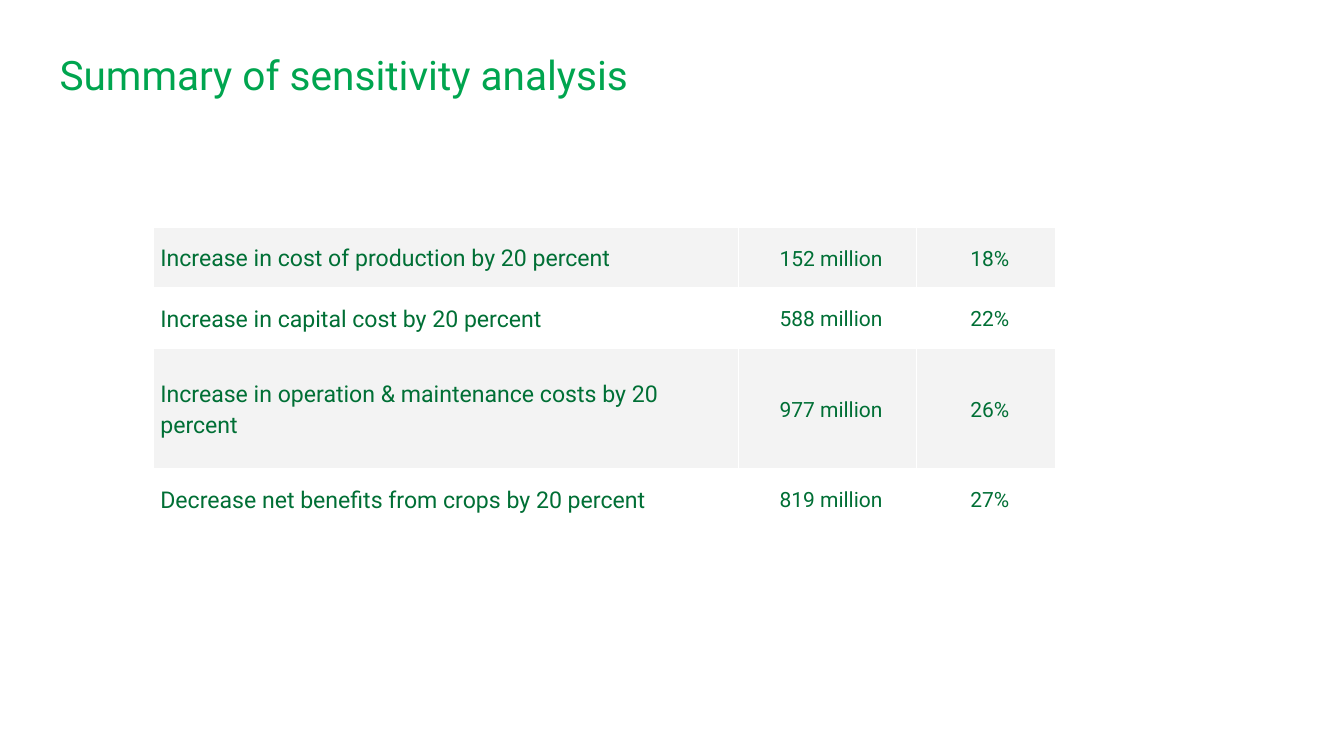
import dataclasses

import lxml.etree
import pptx
import pptx.dml.color
import pptx.enum.text
import pptx.oxml.ns
import pptx.util

Cm = pptx.util.Cm
Pt = pptx.util.Pt
RGB = pptx.dml.color.RGBColor.from_string
ALIGN = pptx.enum.text.PP_ALIGN
MIDDLE = pptx.enum.text.MSO_ANCHOR.MIDDLE


@dataclasses.dataclass(frozen=True)
class Theme:
    font: str = "Roboto"
    title: str = "00A54F"
    text: str = "006F35"
    band: str = "F3F3F3"
    plain: str = "FFFFFF"
    head_size: float = 58
    label_size: float = 33
    value_size: float = 30
    rule: float = 0.75


def write(frame, text, *, font, size, color, align=ALIGN.LEFT, indent=0, spacing=1.0):
    para = frame.paragraphs[0]
    para.alignment = align
    para.line_spacing = spacing
    if indent:
        props = para._p.get_or_add_pPr()
        props.set("marL", str(Cm(indent)))
        props.set("indent", "0")
    run = para.add_run()
    run.text = text
    run.font.name = font
    run.font.size = Pt(size)
    run.font.color.rgb = RGB(color)


def edge(cell, color, width):
    """Draw the same border on all four sides of a cell."""
    props = cell._tc.get_or_add_tcPr()
    qn = pptx.oxml.ns.qn
    for place, side in enumerate(("a:lnL", "a:lnR", "a:lnT", "a:lnB")):
        line = lxml.etree.Element(qn(side), w=str(Pt(width)))
        fill = lxml.etree.SubElement(line, qn("a:solidFill"))
        lxml.etree.SubElement(fill, qn("a:srgbClr"), val=color)
        props.insert(place, line)


class Page:
    def __init__(self, slide, theme):
        self.slide = slide
        self.theme = theme

    def title(self, text, left, top, width, height):
        box = self.slide.shapes.add_textbox(Cm(left), Cm(top), Cm(width), Cm(height))
        frame = box.text_frame
        frame.word_wrap = True
        frame.vertical_anchor = MIDDLE
        frame.margin_left = frame.margin_right = Cm(0.69)
        frame.margin_top = frame.margin_bottom = Cm(0.69)
        write(frame, text, font=self.theme.font, size=self.theme.head_size,
              color=self.theme.title)

    def table(self, data, left, top, widths, heights):
        grid = self.slide.shapes.add_table(
            len(heights), len(widths), Cm(left), Cm(top),
            Cm(sum(widths)), Cm(sum(heights))).table
        grid.first_row = False
        grid.horz_banding = False
        for column, width in zip(grid.columns, widths):
            column.width = Cm(width)
        for row, height in zip(grid.rows, heights):
            row.height = Cm(height)
        for r, texts in enumerate(data):
            for c, text in enumerate(texts):
                self.cell(grid.cell(r, c), text, banded=r % 2 == 0, label=c == 0)

    def cell(self, cell, text, banded, label):
        theme = self.theme
        cell.margin_left = cell.margin_right = 0
        cell.margin_top = cell.margin_bottom = 0
        cell.vertical_anchor = MIDDLE
        cell.fill.solid()
        cell.fill.fore_color.rgb = RGB(theme.band if banded else theme.plain)
        edge(cell, theme.plain, theme.rule)
        write(cell.text_frame, text, font=theme.font, color=theme.text,
              size=theme.label_size if label else theme.value_size,
              align=ALIGN.LEFT if label else ALIGN.CENTER,
              indent=0.36, spacing=1.15)


def main():
    deck = pptx.Presentation()
    deck.slide_width = Cm(67.74)
    deck.slide_height = Cm(38.1)
    page = Page(deck.slides.add_slide(deck.slide_layouts[6]), Theme())
    page.title("Summary of sensitivity analysis", 2.31, 1.6, 52.96, 4.24)
    cases = [
        ("Increase in cost of production by 20 percent", "152 million", "18%"),
        ("Increase in capital cost by 20 percent", "588 million", "22%"),
        ("Increase in operation & maintenance costs by 20 percent", "977 million", "26%"),
        ("Decrease net benefits from crops by 20 percent", "819 million", "27%"),
    ]
    page.table(cases, 7.72, 11.43, widths=(29.49, 8.99, 7.01),
               heights=(3.05, 3.05, 6.07, 3.05))
    deck.save("out.pptx")


if __name__ == "__main__":
    main()
